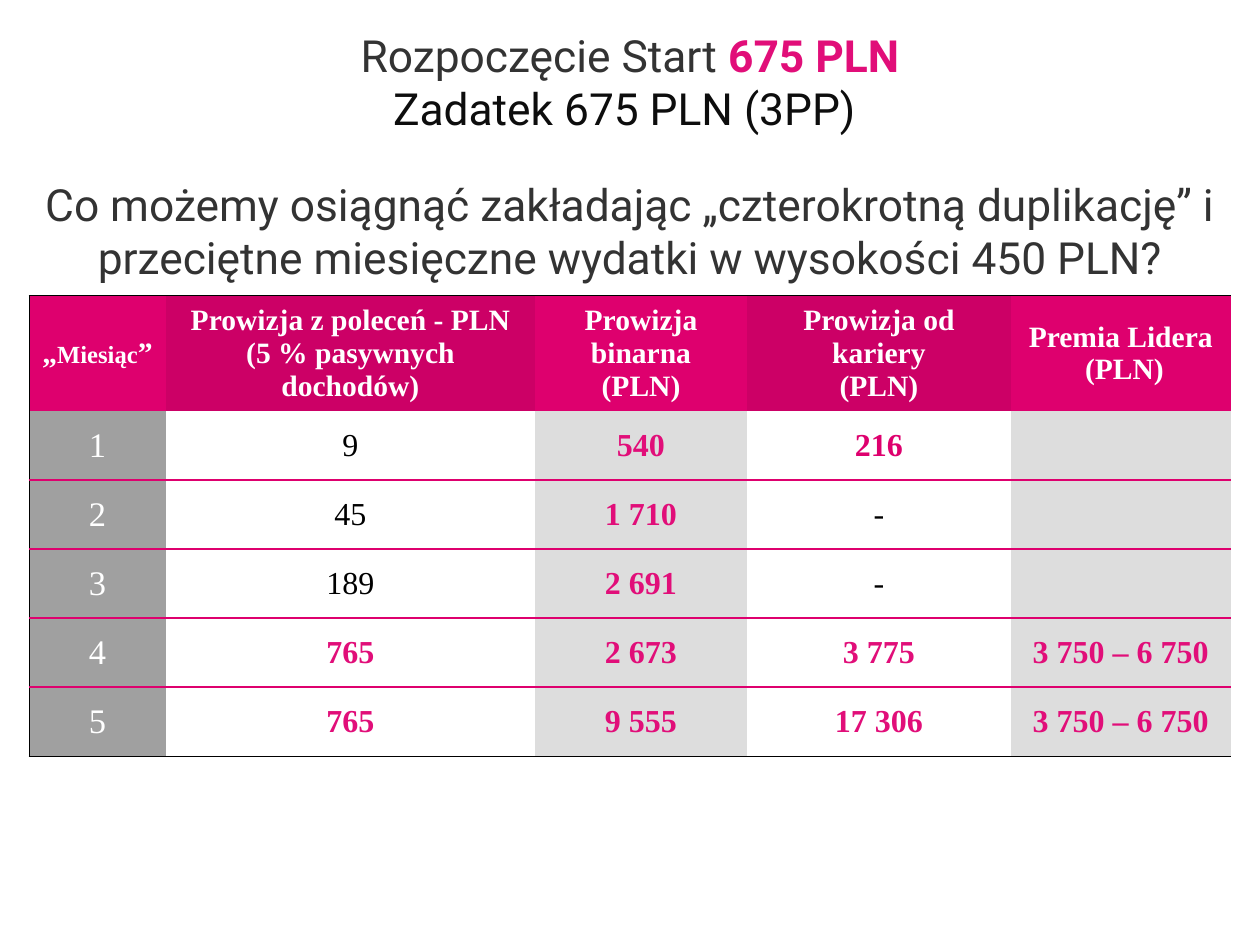
from dataclasses import dataclass

from lxml import etree
from pptx import Presentation, util as u
from pptx.dml.color import RGBColor
from pptx.enum import text
from pptx.oxml import ns

COLOURS = {
    "white": "FFFFFF", "black": "000000", "ink": "0D0D0D", "charcoal": "333333",
    "pink": "E10E79", "magenta": "DE006E", "crimson": "CC0066",
    "grey": "A0A0A0", "silver": "DDDDDD",
}


@dataclass(frozen=True)
class Look:
    size: int
    colour: str
    bold: bool = False
    font: str = "Times New Roman"


@dataclass(frozen=True)
class Span:
    words: str
    look: Look


@dataclass(frozen=True)
class Column:
    width: float
    header: list[list[Span]]
    header_fill: str
    body_fill: str | None = None


@dataclass(frozen=True)
class Line:
    colour: str
    points: float


TITLE = Look(36, "charcoal", font="Roboto")
TITLE_INK = Look(36, "ink", font="Roboto")
TITLE_BOLD = Look(36, "pink", True, "Roboto")
HEADER = Look(24, "white", True)
HEADER_SMALL = Look(20, "white", True)
MONTH = Look(28, "white")
PLAIN = Look(26, "black")
GAIN = Look(26, "pink", True)
FIRST_CAREER = Look(26, "magenta", True)

INTRO = [
    [Span("Rozpoczęcie Start ", TITLE), Span("675 PLN", TITLE_BOLD)],
    [Span("Zadatek 675 PLN (3PP) ", TITLE_INK)],
    [Span("Co możemy osiągnąć zakładając „czterokrotną duplikację” i "
          "przeciętne miesięczne wydatki w wysokości 450 PLN?", TITLE)],
]

COLUMNS = [
    Column(1.54, [[Span("„", HEADER), Span("Miesiąc", HEADER_SMALL), Span("”", HEADER)]],
           "magenta", "grey"),
    Column(4.17, [[Span("Prowizja z poleceń - PLN\n(5 % pasywnych dochodów)", HEADER)]],
           "crimson"),
    Column(2.39, [[Span("Prowizja binarna\n(PLN)", HEADER)]], "magenta", "silver"),
    Column(2.98, [[Span("Prowizja od kariery\n(PLN)", HEADER)]], "crimson"),
    Column(2.48, [[Span("Premia Lidera", HEADER)], [Span(" (PLN)", HEADER)]],
           "magenta", "silver"),
]

MONTHS = [
    [Span("9", PLAIN), Span("540", GAIN), Span("216", FIRST_CAREER), None],
    [Span("45", PLAIN), Span("1 710", GAIN), Span("-", PLAIN), None],
    [Span("189", PLAIN), Span("2 691", GAIN), Span("-", PLAIN), None],
    [Span("765", GAIN), Span("2 673", GAIN), Span("3 775", GAIN), Span("3 750 – 6 750", GAIN)],
    [Span("765", GAIN), Span("9 555", GAIN), Span("17 306", GAIN), Span("3 750 – 6 750", GAIN)],
]
HEADER_HEIGHT, MONTH_HEIGHT = 1.29, 0.78
FRAME = Line("black", 1)
RULE = Line("magenta", 1.5)


def rgb(name: str) -> RGBColor:
    return RGBColor.from_string(COLOURS[name])


def write(frame, paragraphs: list[list[Span]]) -> None:
    """Fill a text frame with centred paragraphs; a newline is a line break."""
    for index, spans in enumerate(paragraphs):
        para = frame.add_paragraph() if index else frame.paragraphs[0]
        para.alignment = text.PP_ALIGN.CENTER
        for span in spans:
            for number, words in enumerate(span.words.split("\n")):
                if number:
                    para.add_line_break()
                run = para.add_run()
                run.text = words
                run.font.name = span.look.font
                run.font.size = u.Pt(span.look.size)
                run.font.bold = span.look.bold
                run.font.color.rgb = rgb(span.look.colour)


def set_borders(cell, left: Line | None, top: Line | None, bottom: Line | None) -> None:
    """Draw the given sides and clear the others; call before setting the fill."""
    properties = cell._tc.get_or_add_tcPr()
    for side, line in (("L", left), ("R", None), ("T", top), ("B", bottom)):
        edge = etree.SubElement(properties, ns.qn(f"a:ln{side}"))
        if line is None:
            etree.SubElement(edge, ns.qn("a:noFill"))
            continue
        edge.set("w", str(u.Pt(line.points)))
        fill = etree.SubElement(edge, ns.qn("a:solidFill"))
        etree.SubElement(fill, ns.qn("a:srgbClr"), val=COLOURS[line.colour])


def add_intro(page) -> None:
    box = page.shapes.add_textbox(0, u.Inches(0.19), u.Inches(14.22), u.Inches(3.14))
    frame = box.text_frame
    frame.word_wrap = True
    frame.vertical_anchor = text.MSO_ANCHOR.MIDDLE
    frame.margin_left = frame.margin_right = u.Inches(0.06)
    frame.margin_top = frame.margin_bottom = u.Inches(0.06)
    write(frame, INTRO)
    frame.paragraphs[-1].space_before = u.Pt(35)


def add_commissions(page) -> None:
    rows = [[column.header for column in COLUMNS]]
    for month, spans in enumerate(MONTHS, 1):
        rows.append([[[span]] if span else [] for span in [Span(str(month), MONTH), *spans]])
    last = len(rows) - 1

    table = page.shapes.add_table(
        len(rows), len(COLUMNS), u.Inches(0.33), u.Inches(3.34),
        u.Inches(sum(column.width for column in COLUMNS)),
        u.Inches(HEADER_HEIGHT + MONTH_HEIGHT * last)).table
    table.first_row = table.horz_banding = False
    for place, column in enumerate(COLUMNS):
        table.columns[place].width = u.Inches(column.width)

    for index, row in enumerate(rows):
        table.rows[index].height = u.Inches(MONTH_HEIGHT if index else HEADER_HEIGHT)
        top = FRAME if index == 0 else RULE if index > 1 else None
        bottom = FRAME if index == last else RULE if index else None
        for place, (column, paragraphs) in enumerate(zip(COLUMNS, row)):
            cell = table.cell(index, place)
            cell.vertical_anchor = text.MSO_ANCHOR.MIDDLE
            set_borders(cell, None if place else FRAME, top, bottom)
            colour = column.body_fill if index else column.header_fill
            if colour:
                cell.fill.solid()
                cell.fill.fore_color.rgb = rgb(colour)
            else:
                cell.fill.background()
            write(cell.text_frame, paragraphs)


def main() -> None:
    deck = Presentation()
    deck.slide_width, deck.slide_height = u.Inches(14.22), u.Inches(10.67)
    page = deck.slides.add_slide(deck.slide_layouts[6])
    add_intro(page)
    add_commissions(page)
    deck.save("out.pptx")


if __name__ == "__main__":
    main()
